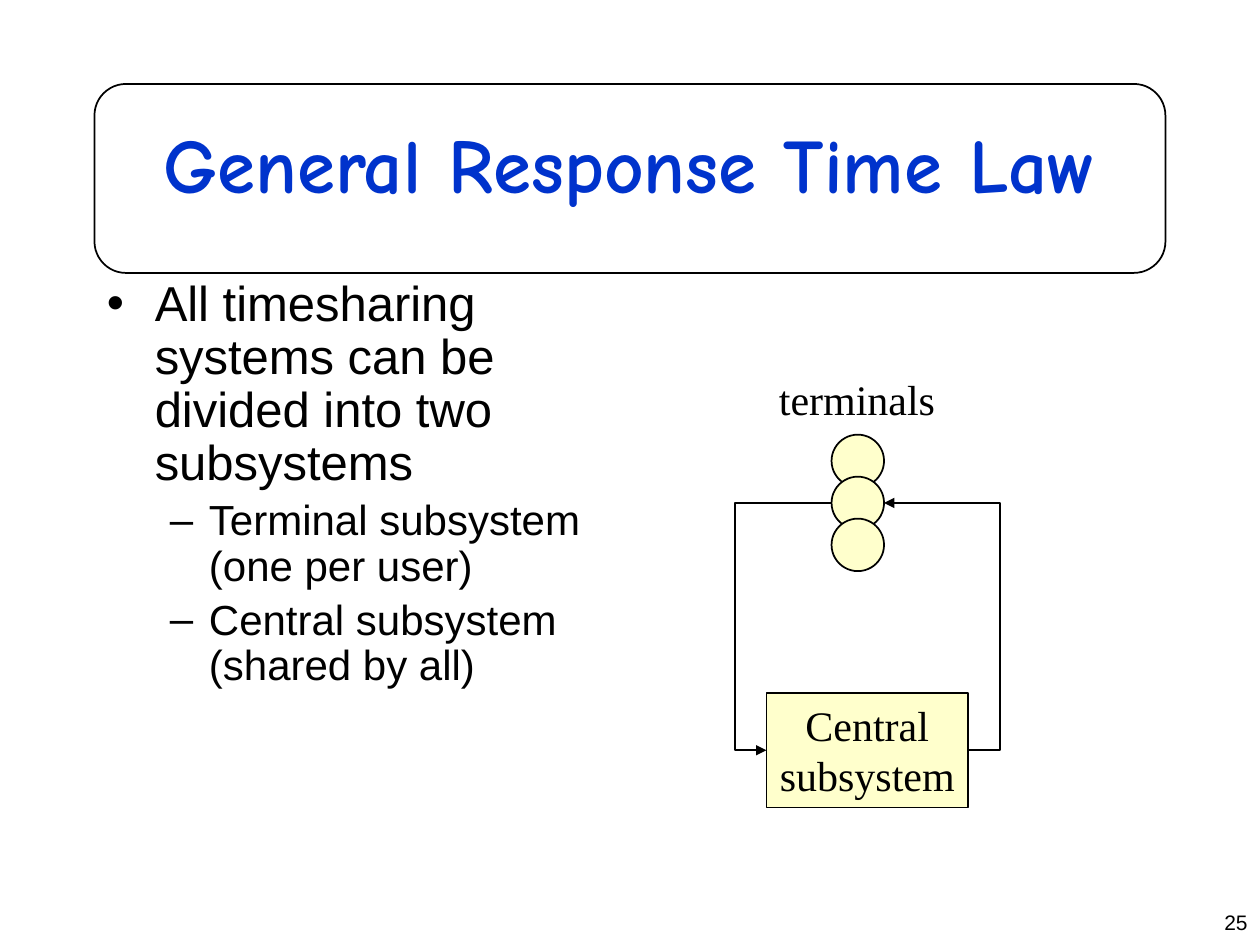
from lxml.etree import SubElement
from pptx import Presentation
from pptx.dml.color import RGBColor
from pptx.enum.shapes import MSO_CONNECTOR as Link, MSO_SHAPE as Shape
from pptx.enum.text import MSO_ANCHOR as Anchor, MSO_AUTO_SIZE as AutoSize, PP_ALIGN as Align
from pptx.oxml.ns import qn
from pptx.util import Inches, Pt

COLORS = {"ink": "000000", "title": "0033CC", "node": "FFFFCC"}
CELLS_PER_INCH = 12
BULLETS = [
    (0, "All timesharing systems can be divided into two subsystems"),
    (1, "Terminal subsystem (one per user)"),
    (1, "Central subsystem (shared by all)"),
]
LEVELS = [("•", 28, 0.38, -0.38), ("–", 24, 0.81, -0.31)]


def cells(*counts):
    return [Inches(count / CELLS_PER_INCH) for count in counts]


def color(name):
    return RGBColor.from_string(COLORS[name])


def add_run(paragraph, text, size, font="Arial", ink="ink", bold=False):
    run = paragraph.add_run()
    run.text = text
    run.font.size = Pt(size)
    run.font.name = font
    run.font.bold = bold
    run.font.color.rgb = color(ink)


def place_title(slide, text, area):
    title = slide.shapes.title
    title.left, title.top, title.width, title.height = cells(*area)
    frame = title.text_frame
    frame.auto_size = AutoSize.NONE
    frame.vertical_anchor = Anchor.MIDDLE
    paragraph = frame.paragraphs[0]
    paragraph.alignment = Align.CENTER
    add_run(paragraph, text, 44, "Comic Neue", "title", True)


def add_node(slide, kind, area, fill=None, width=1):
    node = slide.shapes.add_shape(kind, *cells(*area))
    node.shadow.inherit = False
    if fill:
        node.fill.solid()
        node.fill.fore_color.rgb = color(fill)
    else:
        node.fill.background()
    node.line.color.rgb = color("ink")
    node.line.width = Pt(width)
    return node


def write_lines(frame, lines, size, font, align, wrap=False):
    frame.word_wrap = wrap
    for index, line in enumerate(lines):
        paragraph = frame.add_paragraph() if index else frame.paragraphs[0]
        paragraph.alignment = align
        add_run(paragraph, line, size, font)


def add_label(slide, text, area, size, font, align, wrap=False):
    label = slide.shapes.add_textbox(*cells(*area))
    write_lines(label.text_frame, [text], size, font, align, wrap)


def add_bullets(slide, area):
    frame = slide.shapes.add_textbox(*cells(*area)).text_frame
    frame.word_wrap = True
    for index, (level, text) in enumerate(BULLETS):
        mark, size, margin, indent = LEVELS[level]
        paragraph = frame.add_paragraph() if index else frame.paragraphs[0]
        properties = paragraph._p.get_or_add_pPr()
        properties.set("marL", str(Inches(margin)))
        properties.set("indent", str(Inches(indent)))
        SubElement(properties, qn("a:buFont"), typeface="Arial")
        SubElement(properties, qn("a:buChar"), char=mark)
        paragraph.level = level
        paragraph.line_spacing = 0.9
        if index:
            paragraph.space_before = Pt(5)
        add_run(paragraph, text, size)


def add_flow(slide, start, end, bend_column):
    flow = slide.shapes.add_connector(Link.ELBOW, *cells(*start, *end))
    flow.line.color.rgb = color("ink")
    flow.line.width = Pt(1)
    SubElement(flow.line._get_or_add_ln(), qn("a:tailEnd"), type="triangle")
    properties = flow._element.spPr
    SubElement(properties, qn("a:effectLst"))
    bend = round(100000 * (bend_column - start[0]) / (end[0] - start[0]))
    guides = properties.find(qn("a:prstGeom")).get_or_add_avLst()
    SubElement(guides, qn("a:gd"), name="adj1", fmla=f"val {bend}")


def add_diagram(slide):
    serif = "Times New Roman"
    terminal_left, terminal_top, diameter, step = 79.2, 41.4, 5, 4
    for row in range(3):
        area = (terminal_left, terminal_top + row * step, diameter, diameter)
        add_node(slide, Shape.OVAL, area, "node")
    add_label(slide, "terminals", (73, 35, 17.4, 6), 24, serif, Align.LEFT)

    central_left, central_top, central_width, central_height = 73, 66, 19.2, 10.9
    terminal_row = terminal_top + step + diameter / 2
    central_row = central_top + central_height / 2
    add_flow(slide, (central_left + central_width, central_row),
             (terminal_left + diameter, terminal_row), 95.25)
    add_flow(slide, (terminal_left, terminal_row), (central_left, central_row), 70)

    area = (central_left, central_top, central_width, central_height)
    central = add_node(slide, Shape.RECTANGLE, area, "node", 0.75)
    central.text_frame.vertical_anchor = Anchor.TOP
    write_lines(central.text_frame, ["Central", "subsystem"], 24, serif, Align.CENTER)


def main():
    deck = Presentation()
    deck.slide_width, deck.slide_height = Inches(10), Inches(7.5)
    slide = deck.slides.add_slide(deck.slide_layouts[5])
    add_node(slide, Shape.ROUNDED_RECTANGLE, (9, 8, 102, 18))
    place_title(slide, "General Response Time Law", (9, 8, 102, 15))
    add_bullets(slide, (9, 26, 50, 54))
    add_label(slide, "25", (111, 86, 9, 4), 12, "Arial", Align.RIGHT, True)
    add_diagram(slide)
    deck.save("out.pptx")


if __name__ == "__main__":
    main()
